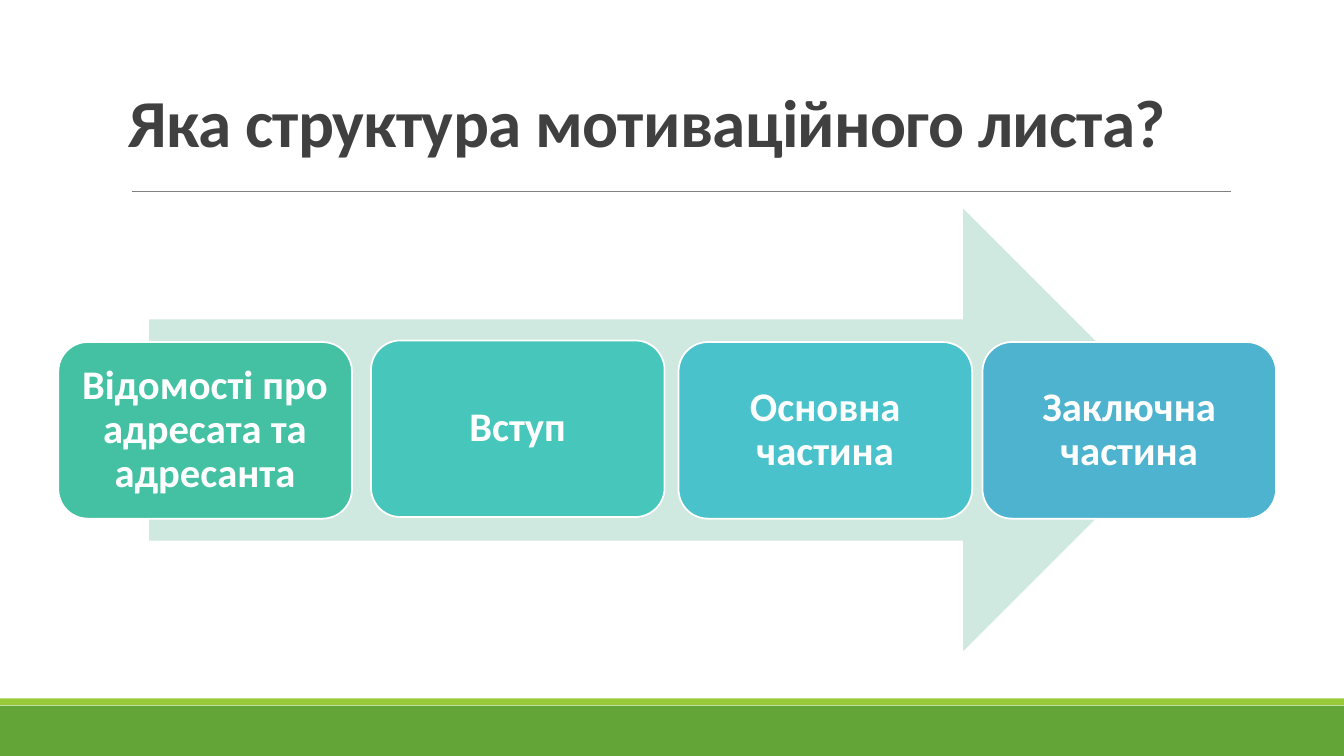
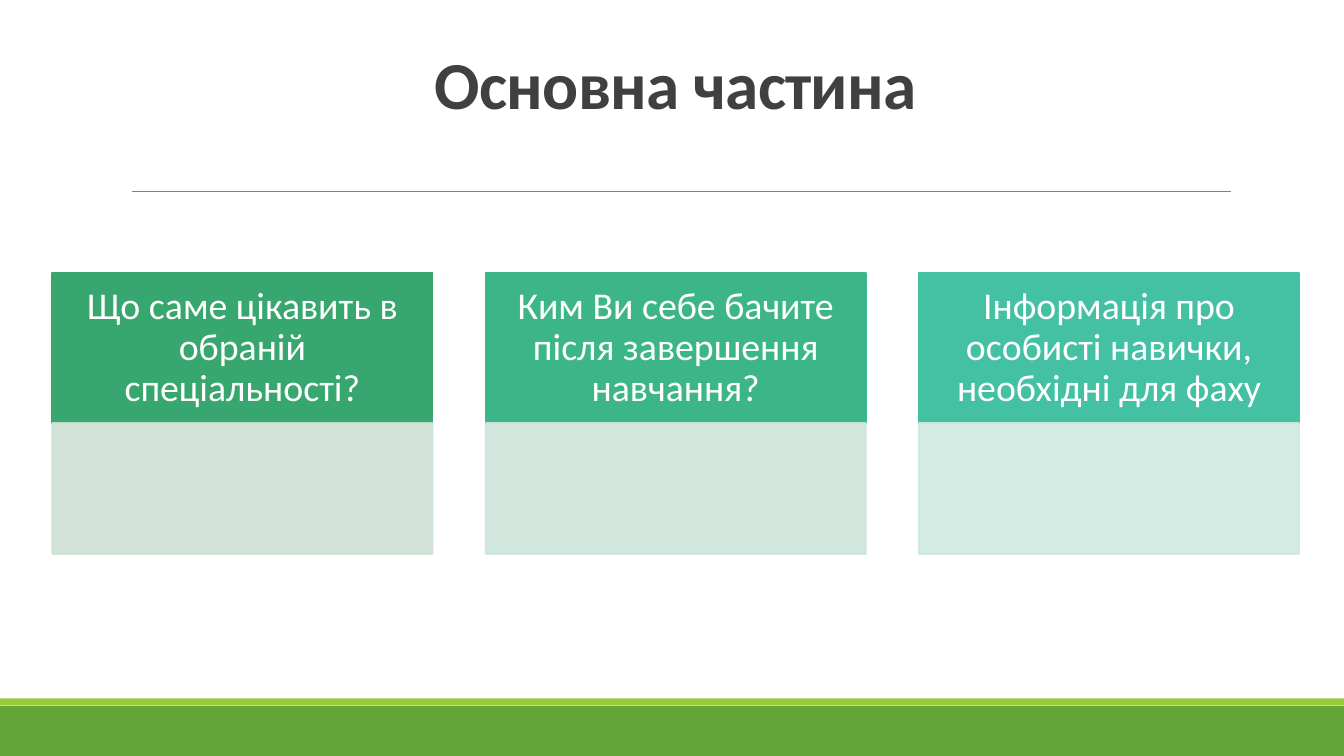
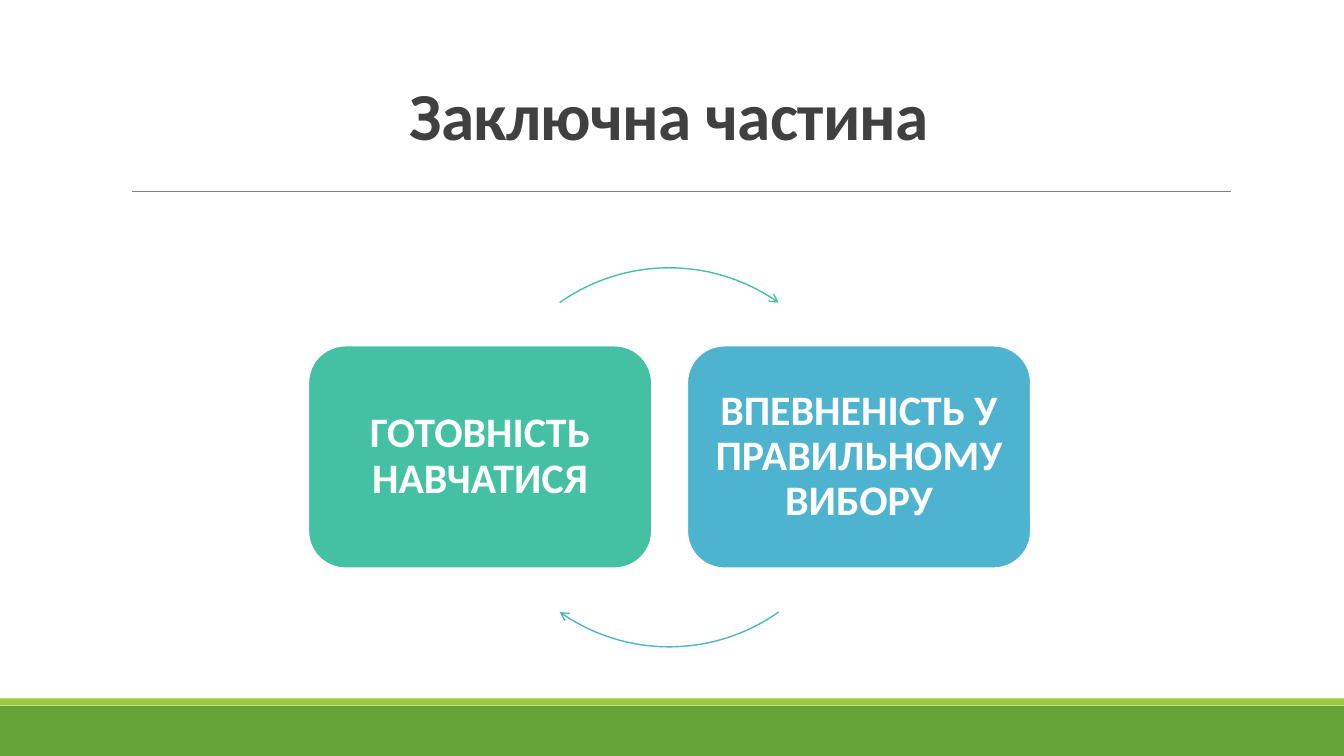
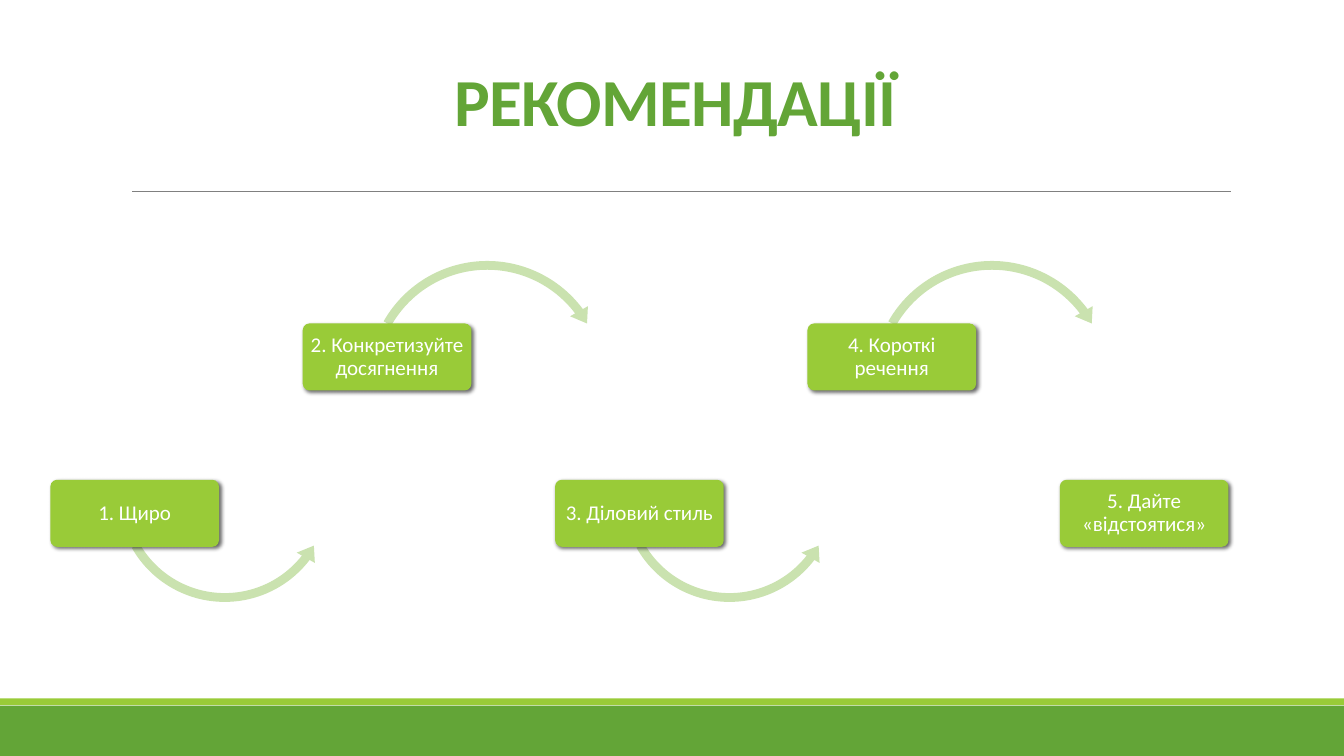
from dataclasses import dataclass

from lxml import etree
from pptx import Presentation
from pptx import util as u
from pptx.dml.color import RGBColor
from pptx.enum import shapes, text
from pptx.oxml import ns


@dataclass(frozen=True)
class Theme:
    font: str = "Calibri"
    white: str = "FFFFFF"
    ink: str = "404040"
    rule: str = "808080"
    green: str = "63A537"
    lime: str = "99CB38"
    pale_lime: str = "CAE2AF"
    mint: str = "CFE9E0"
    teal: str = "44C1A3"
    blue: str = "4EB3CF"
    title_size: int = 48
    part_size: int = 29
    topic_size: int = 27
    idea_size: int = 30
    tip_size: int = 15
    border: float = 1.25


THEME = Theme()
CENTER = text.PP_ALIGN.CENTER
LEFT = text.PP_ALIGN.LEFT
KIND = shapes.MSO_SHAPE
WIDTH, HEIGHT = 33.87, 19.05

PARTS = [
    ("Відомості про адресата та адресанта", THEME.teal, 1.47, 8.62),
    ("Вступ", "47C6BB", 9.35, 8.58),
    ("Основна частина", "4AC2CB", 17.1, 8.62),
    ("Заключна частина", THEME.blue, 24.76, 8.62),
]
TOPICS = [
    ("Що саме цікавить в обраній спеціальності?", "37A76F", "CEE1D5"),
    ("Ким Ви себе бачите після завершення навчання?", "3CB689", "CEE5DA"),
    ("Інформація про особисті навички, необхідні для фаху", THEME.teal, THEME.mint),
]
IDEAS = [
    ("ГОТОВНІСТЬ НАВЧАТИСЯ", THEME.teal, (234.7, 305.3)),
    ("ВПЕВНЕНІСТЬ У ПРАВИЛЬНОМУ ВИБОРУ", THEME.blue, (54.7, 125.3)),
]
TIPS = [
    "1. Щиро",
    "2. Конкретизуйте досягнення",
    "3. Діловий стиль",
    "4. Короткі речення",
    "5. Дайте «відстоятися»",
]
TIP_ROWS = [
    {"top": 12.09, "arrow": KIND.LEFT_CIRCULAR_ARROW, "at": (1.55, 9.63), "size": 5.69,
     "adjust": (0.039, 4.895, 22.651, 90.245, 0.046)},
    {"top": 8.15, "arrow": KIND.CIRCULAR_ARROW, "at": (1.5, 6.43), "size": 6.3,
     "adjust": (0.035, 4.382, 193.863, 125.755, 0.041)},
]


def color(value):
    return RGBColor.from_string(value)


def child(parent, tag, **attributes):
    return etree.SubElement(parent, ns.qn(tag), attributes)


def box(left, top, width, height):
    return [u.Cm(value) for value in (left, top, width, height)]


def write(shape, words, size, ink, bold=False, align=CENTER, spacing=0.9, margins=(0.3, 0.3)):
    frame = shape.text_frame
    frame.word_wrap = True
    frame.vertical_anchor = text.MSO_ANCHOR.MIDDLE
    frame.margin_left = frame.margin_right = u.Cm(margins[0])
    frame.margin_top = frame.margin_bottom = u.Cm(margins[1])
    paragraph = frame.paragraphs[0]
    paragraph.text = words
    paragraph.alignment = align
    paragraph.line_spacing = spacing
    paragraph.font.name = THEME.font
    paragraph.font.size = u.Pt(size)
    paragraph.font.bold = bold
    paragraph.font.color.rgb = color(ink)
    return frame


def add_shape(slide, kind, place, fill=None, line=None, weight=THEME.border, adjust=()):
    shape = slide.shapes.add_shape(kind, *box(*place))
    shape.shadow.inherit = False
    for index, value in enumerate(adjust):
        shape.adjustments[index] = value
    if fill:
        shape.fill.solid()
        shape.fill.fore_color.rgb = color(fill)
    else:
        shape.fill.background()
    if line:
        shape.line.color.rgb = color(line)
        shape.line.width = u.Pt(weight)
    else:
        shape.line.fill.background()
    return shape


def make_translucent(shape, percent):
    for tint in shape._element.spPr.iter(ns.qn("a:srgbClr")):
        child(tint, "a:alpha", val=str(percent * 1000))


def drop_shadow(shape):
    effects = shape._element.spPr.find(ns.qn("a:effectLst"))
    shadow = child(effects, "a:outerShdw", blurRad=str(u.Pt(3)), dist=str(u.Pt(2)),
                   dir=str(45 * 60000), algn="ctr", rotWithShape="0")
    tint = child(shadow, "a:srgbClr", val="000000")
    child(tint, "a:alpha", val="60000")


def add_slide(presentation, title, place, align=CENTER, ink=THEME.ink, bottom=0.13):
    slide = presentation.slides.add_slide(presentation.slide_layouts[6])
    add_shape(slide, KIND.RECTANGLE, (0, 17.78, WIDTH, 1.27), THEME.green)
    add_shape(slide, KIND.RECTANGLE, (0, 17.6, WIDTH, 0.17), THEME.lime)
    rule = slide.shapes.add_connector(shapes.MSO_CONNECTOR.STRAIGHT,
                                      u.Cm(3.33), u.Cm(4.83), u.Cm(31.01), u.Cm(4.83))
    rule.line.color.rgb = color(THEME.rule)
    rule.line.width = u.Pt(0.5)
    child(rule._element.spPr, "a:effectLst")
    heading = slide.shapes.add_textbox(*box(*place))
    frame = write(heading, title, THEME.title_size, ink, True, align, 0.85, (0.25, 0.13))
    frame.vertical_anchor = text.MSO_ANCHOR.BOTTOM
    frame.margin_bottom = u.Cm(bottom)
    frame.paragraphs[0].runs[0]._r.get_or_add_rPr().set("spc", "-50")
    return slide


def build_structure(presentation):
    slide = add_slide(presentation, "Яка структура мотиваційного листа?",
                      (3, 0, 29.9, 4.19), LEFT)
    add_shape(slide, KIND.RIGHT_ARROW, (3.76, 5.26, 26.09, 11.15), THEME.mint)
    for words, fill, left, top in PARTS:
        card = add_shape(slide, KIND.ROUNDED_RECTANGLE, (left, top, 7.4, 4.45),
                         fill, THEME.white)
        write(card, words, THEME.part_size, THEME.white, True)


def build_main_part(presentation):
    slide = add_slide(presentation, "Основна частина", (5.18, 0.81, 23.7, 4.19), bottom=2.18)
    top, width, pitch, head, body = 6.88, 9.58, 10.92, 3.78, 3.3
    for index, (words, fill, pale) in enumerate(TOPICS):
        left = 1.32 + index * pitch
        header = add_shape(slide, KIND.RECTANGLE, (left, top, width, head), fill, fill)
        write(header, words, THEME.topic_size, THEME.white, margins=(0.53, 0.3))
        panel = add_shape(slide, KIND.RECTANGLE, (left, top + head, width, body), pale, pale)
        make_translucent(panel, 90)


def build_closing_part(presentation):
    slide = add_slide(presentation, "Заключна частина", (5.72, -0.18, 22.3, 4.19))
    for index, (words, fill, angles) in enumerate(IDEAS):
        card = add_shape(slide, KIND.ROUNDED_RECTANGLE, (7.77 + index * 9.55, 8.71, 8.66, 5.61),
                         fill, THEME.white)
        write(card, words, THEME.idea_size, THEME.white, True)
        arc = add_shape(slide, KIND.ARC, (12.09, 6.75, 9.55, 9.55), line=fill, weight=1,
                        adjust=[angle * 0.6 for angle in angles])
        child(arc.line._get_or_add_ln(), "a:tailEnd", type="arrow")


def build_tips(presentation):
    slide = add_slide(presentation, "РЕКОМЕНДАЦІЇ", (3.05, 0.79, 27.94, 2.87), ink=THEME.green)
    for index, words in enumerate(TIPS):
        row = TIP_ROWS[index % 2]
        left = 1.27 + index * 6.36
        if index < len(TIPS) - 1:
            shift, arrow_top = row["at"]
            add_shape(slide, row["arrow"], (left + shift, arrow_top, row["size"], row["size"]),
                      THEME.pale_lime, adjust=row["adjust"])
        card = add_shape(slide, KIND.ROUNDED_RECTANGLE, (left, row["top"], 4.25, 1.69),
                         THEME.lime, adjust=[0.1])
        drop_shadow(card)
        write(card, words, THEME.tip_size, THEME.white, margins=(0.08, 0.05))


def main():
    presentation = Presentation()
    presentation.slide_width = u.Cm(WIDTH)
    presentation.slide_height = u.Cm(HEIGHT)
    for build in (build_structure, build_main_part, build_closing_part, build_tips):
        build(presentation)
    presentation.save("out.pptx")


if __name__ == "__main__":
    main()
